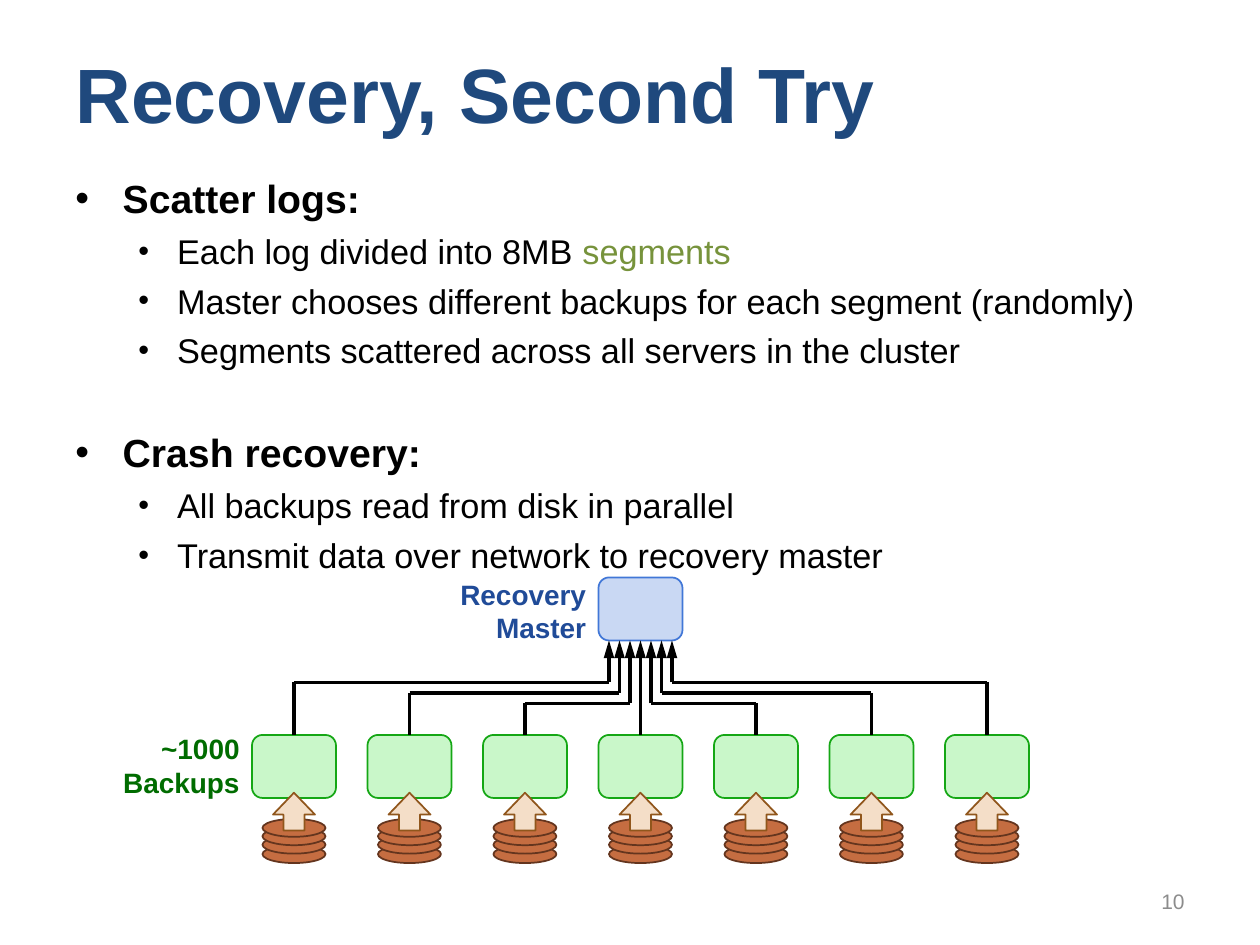
"""Build the slide on scattered logs and crash recovery."""
from dataclasses import dataclass

from lxml.etree import SubElement
from pptx import Presentation
from pptx.dml.color import RGBColor
from pptx.enum.shapes import MSO_CONNECTOR as Connector, MSO_SHAPE as Shape
from pptx.enum.text import MSO_ANCHOR as Anchor, MSO_AUTO_SIZE as AutoSize, PP_ALIGN as Align
from pptx.oxml.ns import qn
from pptx.util import Emu, Pt

PX = 7620
COLORS = {
    "title": "1F497D", "text": "000000", "segment": "77933C", "number": "8C8C8C",
    "master_fill": "C9D8F3", "master_line": "4177D7", "master_text": "204B98",
    "backup_fill": "C9F7C9", "backup_line": "15A715", "backup_text": "006C00",
    "disk_fill": "C56D41", "disk_line": "64351E",
    "arrow_fill": "F4DEC8", "arrow_line": "90561C",
}
CENTER_X, SERVER_W, SERVER_H = 610, 80, 60
MASTER_Y, BACKUP_Y, DISK_Y = 550, 700, 780
BACKUP_PITCH, WIRE_PITCH, LOWEST_WIRE_Y = 110, 10, 670
SIDE_COUNT, DISK_COUNT = 3, 4


@dataclass(frozen=True)
class Frame:
    left: int
    top: int
    width: int
    height: int

    def emu(self) -> list[Emu]:
        return [px(n) for n in (self.left, self.top, self.width, self.height)]


@dataclass(frozen=True)
class Level:
    size: float
    bold: bool
    indent: int
    hang: int
    bullet_percent: int


@dataclass(frozen=True)
class Bullet:
    level: Level
    text: str
    accent: str = ""
    space_before: int = 5


HEADING = Level(22.4, True, 45, 45, 100)
DETAIL = Level(19.6, False, 97, 37, 90)
BULLETS = (
    Bullet(HEADING, "Scatter logs:"),
    Bullet(DETAIL, "Each log divided into 8MB ", accent="segments"),
    Bullet(DETAIL, "Master chooses different backups for each segment (randomly)"),
    Bullet(DETAIL, "Segments scattered across all servers in the cluster"),
    Bullet(HEADING, "Crash recovery:", space_before=33),
    Bullet(DETAIL, "All backups read from disk in parallel"),
    Bullet(DETAIL, "Transmit data over network to recovery master"),
)


def px(count: int) -> Emu:
    return Emu(count * PX)


def rgb(name: str) -> RGBColor:
    return RGBColor.from_string(COLORS[name])


def add_text(para, text: str, *, size: float, color: str, bold: bool = False) -> None:
    for index, line in enumerate(text.split("\n")):
        if index:
            para.add_line_break()
        span = para.add_run()
        span.text = line
        span.font.name = "Arial"
        span.font.size = Pt(size)
        span.font.bold = bold
        span.font.color.rgb = rgb(color)


def add_box(page, frame: Frame, *, wrap: bool = True, anchor=Anchor.TOP):
    box = page.shapes.add_textbox(*frame.emu()).text_frame
    box.word_wrap = wrap
    box.vertical_anchor = anchor
    return box


def add_label(page, frame: Frame, text: str, color: str) -> None:
    para = add_box(page, frame, wrap=False).paragraphs[0]
    para.alignment = Align.RIGHT
    add_text(para, text, size=16, color=color, bold=True)


def add_title(page, text: str) -> None:
    title = page.shapes.title
    title.left, title.top, title.width, title.height = Frame(60, 36, 1080, 104).emu()
    title.text_frame.auto_size = AutoSize.NONE
    title.text_frame.vertical_anchor = Anchor.MIDDLE
    para = title.text_frame.paragraphs[0]
    para.alignment = Align.LEFT
    add_text(para, text, size=44, color="title", bold=True)


def add_bullets(page, bullets: tuple[Bullet, ...]) -> None:
    box = add_box(page, Frame(60, 160, 1080, 400))
    for index, bullet in enumerate(bullets):
        para = box.add_paragraph() if index else box.paragraphs[0]
        level = bullet.level
        para.level = 0 if level is HEADING else 1
        para.space_before = Pt(bullet.space_before)
        props = para._p.get_or_add_pPr()
        props.set("marL", str(px(level.indent)))
        props.set("indent", str(px(-level.hang)))
        SubElement(props, qn("a:buSzPct"), val=str(level.bullet_percent * 1000))
        SubElement(props, qn("a:buFont"), typeface="Arial")
        SubElement(props, qn("a:buChar"), char="•")
        add_text(para, bullet.text, size=level.size, color="text", bold=level.bold)
        if bullet.accent:
            add_text(para, bullet.accent, size=level.size, color="segment")


def add_part(parent, kind, frame: Frame, role: str):
    part = parent.shapes.add_shape(kind, *frame.emu())
    part.shadow.inherit = False
    part.fill.solid()
    part.fill.fore_color.rgb = rgb(f"{role}_fill")
    part.line.color.rgb = rgb(f"{role}_line")
    part.line.width = Pt(1)
    return part


def add_server(parent, center: int, top: int, role: str) -> None:
    frame = Frame(center - SERVER_W // 2, top, SERVER_W, SERVER_H)
    add_part(parent, Shape.ROUNDED_RECTANGLE, frame, role)


def add_backup(page, center: int) -> None:
    group = page.shapes.add_group_shape()
    for index in reversed(range(DISK_COUNT)):
        add_part(group, Shape.OVAL, Frame(center - 30, DISK_Y + index * 25 // 3, 60, 17), "disk")
    add_server(group, center, BACKUP_Y, "backup")
    arrow = add_part(group, Shape.UP_ARROW, Frame(center - 20, 755, 40, 36), "arrow")
    arrow.adjustments[1] = 0.58


def add_wire(page, start: tuple[int, int], end: tuple[int, int], *, arrow: bool = False) -> None:
    wire = page.shapes.add_connector(Connector.STRAIGHT, *map(px, start + end))
    wire.line.color.rgb = rgb("text")
    wire.line.width = Pt(2)
    if arrow:
        SubElement(wire.line._get_or_add_ln(), qn("a:tailEnd"), type="triangle", w="med", len="lg")
    SubElement(wire._element.spPr, qn("a:effectLst"))


def connect_backup(page, offset: int) -> None:
    backup_x = CENTER_X + offset * BACKUP_PITCH
    port_x = CENTER_X + offset * WIRE_PITCH
    port = (port_x, MASTER_Y + SERVER_H)
    if offset == 0:
        add_wire(page, (backup_x, BACKUP_Y), port, arrow=True)
        return
    wire_y = LOWEST_WIRE_Y - (abs(offset) - 1) * WIRE_PITCH
    add_wire(page, (backup_x, wire_y), (backup_x, BACKUP_Y))
    add_wire(page, (backup_x, wire_y), (port_x, wire_y))
    add_wire(page, (port_x, wire_y), port, arrow=True)


def main() -> None:
    deck = Presentation()
    deck.slide_width, deck.slide_height = px(1200), px(900)
    page = deck.slides.add_slide(deck.slide_layouts[5])
    add_title(page, "Recovery, Second Try")
    add_bullets(page, BULLETS)
    add_server(page, CENTER_X, MASTER_Y, "master")
    add_label(page, Frame(425, 544, 145, 77), "Recovery\nMaster", "master_text")
    add_label(page, Frame(104, 691, 136, 77), "~1000\nBackups", "backup_text")
    offsets = range(-SIDE_COUNT, SIDE_COUNT + 1)
    for offset in offsets:
        add_backup(page, CENTER_X + offset * BACKUP_PITCH)
    for offset in offsets:
        connect_backup(page, offset)
    number = add_box(page, Frame(860, 834, 280, 48), anchor=Anchor.MIDDLE).paragraphs[0]
    number.alignment = Align.RIGHT
    add_text(number, "10", size=12, color="number")
    deck.save("out.pptx")


if __name__ == "__main__":
    main()
